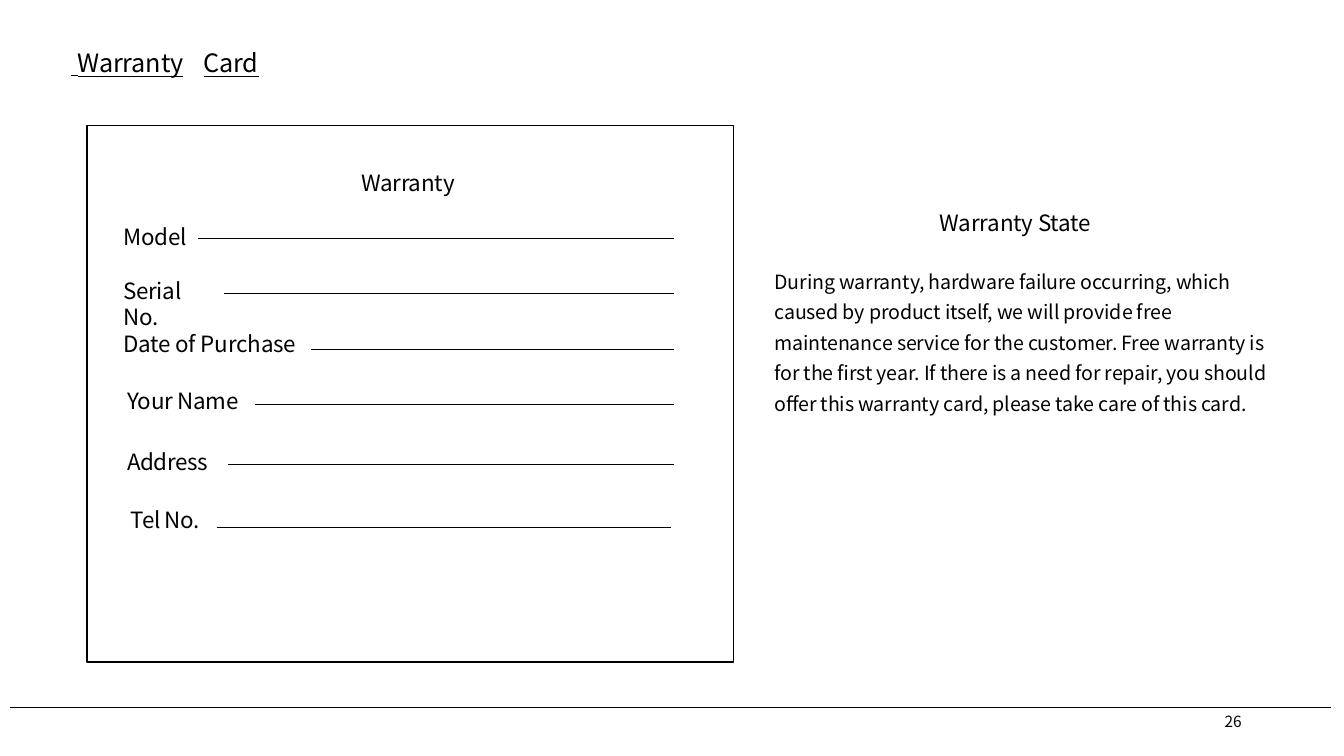
from typing import NamedTuple

import pptx
import pptx.dml.color
import pptx.enum.shapes
import pptx.enum.text
import pptx.oxml
import pptx.util
from lxml import etree

Pt = pptx.util.Pt
BLACK = "000000"
SANS = "Noto Sans CJK SC"


class Text(NamedTuple):
    words: str
    left: float
    top: float
    width: float
    height: float
    size: float = 16
    line_spacing: float = 1.0
    tracking: int = -10  # hundredths of a point


class Field(NamedTuple):
    label: str
    left: float
    top: float
    width: float
    rule_start: float
    rule_end: float
    rule_y: float
    rule_weight: float = 0.6
    tracking: int = -10


def color(hex_value: str) -> pptx.dml.color.RGBColor:
    return pptx.dml.color.RGBColor.from_string(hex_value)


def draw_text(slide, text: Text):
    """Draw a text box and return its paragraph."""
    box = slide.shapes.add_textbox(Pt(text.left), Pt(text.top), Pt(text.width), Pt(text.height))
    frame = box.text_frame
    frame.word_wrap = True
    frame.auto_size = pptx.enum.text.MSO_AUTO_SIZE.NONE
    frame.margin_left = frame.margin_top = Pt(1)
    frame.margin_right = frame.margin_bottom = Pt(0)
    paragraph = frame.paragraphs[0]
    paragraph.line_spacing = text.line_spacing
    paragraph.font.size = Pt(text.size)
    paragraph.font.name = SANS
    paragraph.font.color.rgb = color(BLACK)
    if text.words:
        add_run(paragraph, text.words, text.tracking)
    return paragraph


def add_run(paragraph, words: str, tracking: int):
    run = paragraph.add_run()
    run.text = words
    run.font.language_id = pptx.enum.lang.MSO_LANGUAGE_ID.ENGLISH_US
    run.font._element.set("spc", str(tracking))
    return run


def draw_rule(slide, start: float, end: float, y: float, weight: float) -> None:
    rule = slide.shapes.add_connector(
        pptx.enum.shapes.MSO_CONNECTOR.STRAIGHT, Pt(start), Pt(y), Pt(end), Pt(y))
    rule.line.color.rgb = color(BLACK)
    rule.line.width = Pt(weight)
    etree.SubElement(rule._element.spPr, pptx.oxml.ns.qn("a:effectLst"))


def draw_field(slide, field: Field) -> None:
    draw_text(slide, Text(field.label, field.left, field.top, field.width, 21,
                          tracking=field.tracking))
    draw_rule(slide, field.rule_start, field.rule_end, field.rule_y, field.rule_weight)


def draw_heading(slide) -> None:
    """Underline the words of the heading, but not the tab between them."""
    heading = draw_text(slide, Text("", 50, 33, 860, 24, size=18))
    properties = heading._element.get_or_add_pPr()
    stops = etree.Element(pptx.oxml.ns.qn("a:tabLst"))
    etree.SubElement(stops, pptx.oxml.ns.qn("a:tab"), pos=str(Pt(94.5)), algn="l")
    properties.find(pptx.oxml.ns.qn("a:defRPr")).addprevious(stops)
    add_run(heading, " ", -130).font.name = "Times New Roman"
    for words in ("Warranty", "\t", "Card"):
        add_run(heading, words, -10)
    for run in heading.runs:
        run.font.underline = run.text != "\t"


def draw_card_frame(slide) -> None:
    frame = slide.shapes.add_shape(
        pptx.enum.shapes.MSO_SHAPE.RECTANGLE, Pt(62.3), Pt(89.6), Pt(461.7), Pt(383.4))
    frame.shadow.inherit = False
    frame.fill.background()
    frame.line.color.rgb = color(BLACK)
    frame.line.width = Pt(1)


FIELDS = [
    Field("Model", 87, 158.4, 53, 141.5, 481.5, 170.4),
    Field("Serial No.", 87, 196.6, 58, 160, 481.5, 209.5),
    Field("Date of Purchase", 87, 234.8, 134, 222.3, 481.5, 249.4, 0.7),
    Field("Your Name", 90, 275.8, 88, 182.3, 481.5, 288.9, tracking=-20),
    Field("Address", 90, 319, 72, 163, 481.5, 331.7, tracking=-30),
    Field("Tel No.", 92.5, 360.8, 62, 155, 479.5, 376.6, 0.75, tracking=-30),
]

TEXTS = [
    Text("Warranty", 257, 119.5, 72, 21),
    Text("Warranty State", 670.3, 148.3, 118, 21),
    Text("During warranty, hardware failure occurring, which caused by product itself, "
         "we will provide free maintenance service for the customer. Free warranty is for "
         "the first year. If there is a need for repair, you should offer this warranty "
         "card, please take care of this card.",
         552.2, 186.5, 353, 133, size=14, line_spacing=1.3),
    Text("26", 873.8, 507.4, 20, 16, size=11, tracking=0),
]


def main() -> None:
    deck = pptx.Presentation()
    deck.slide_width, deck.slide_height = Pt(960), Pt(540)
    slide = deck.slides.add_slide(deck.slide_layouts[6])

    # Heading and footer rule
    draw_heading(slide)
    draw_rule(slide, 7.2, 950.4, 505.4, 0.6)

    # Warranty card with its blanks to fill in
    draw_card_frame(slide)
    for field in FIELDS:
        draw_field(slide, field)

    # Titles, warranty statement and page number
    for text in TEXTS:
        draw_text(slide, text)

    deck.save("out.pptx")


if __name__ == "__main__":
    import pptx.enum.lang
    main()
